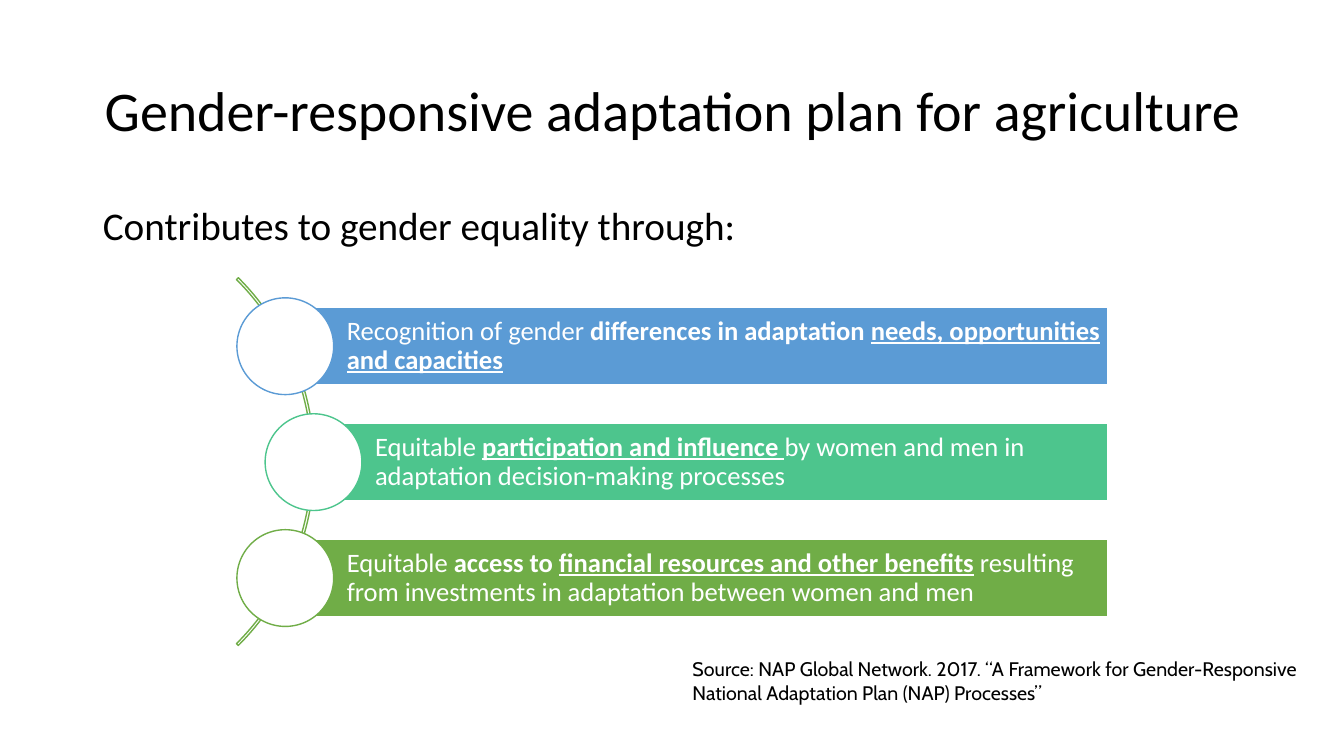
from lxml.etree import SubElement
from pptx import Presentation
from pptx.dml.color import RGBColor
from pptx.enum.shapes import MSO_SHAPE as Shape
from pptx.enum.text import MSO_ANCHOR as Anchor, PP_ALIGN as Align
from pptx.oxml.ns import qn
from pptx.util import Inches, Pt

COLOURS = {"black": "000000", "white": "FFFFFF", "blue": "5B9BD5",
           "teal": "4DC58D", "green": "70AD47"}


def write(box, spans, size, colour, font="Calibri", **layout):
    """Fill a box with one paragraph of (text, format values) spans."""
    box.text_frame.word_wrap = True
    para = box.text_frame.paragraphs[0]
    for name, value in layout.items():
        setattr(para, name, value)
    for text, values in spans:
        span = para.add_run()
        span.text = text
        span.font.color.rgb = RGBColor.from_string(COLOURS[colour])
        for name, value in {"name": font, "size": Pt(size), **values}.items():
            setattr(span.font, name, value)
    return para


def draw(kind, left, top, width, height, line, fill=None):
    """Add a flat preset shape with a 1 pt outline."""
    shape = page.shapes.add_shape(
        kind, Inches(left), Inches(top), Inches(width), Inches(height))
    shape.shadow.inherit = False
    shape.line.color.rgb = RGBColor.from_string(COLOURS[line])
    shape.line.width = Pt(1)
    if fill:
        shape.fill.solid()
        shape.fill.fore_color.rgb = RGBColor.from_string(COLOURS[fill])
    else:
        shape.fill.background()
    return shape


deck = Presentation()
deck.slide_width, deck.slide_height = Inches(13.33), Inches(7.5)
page = deck.slides.add_slide(deck.slide_layouts[1])

# Title and lead-in
title, body = page.placeholders
for box, top, height in ((title, 0.4, 1.45), (body, 2, 4.76)):
    box.left, box.top = Inches(0.92), Inches(top)
    box.width, box.height = Inches(11.5), Inches(height)

title.text_frame.vertical_anchor = Anchor.MIDDLE
write(title, [("Gender-responsive adaptation plan for agriculture", {})],
      40, "black", alignment=Align.CENTER, line_spacing=0.9)
lead = write(body, [("Contributes to gender equality through:", {})],
             28, "black", line_spacing=0.9, space_before=Pt(10))
lead_format = lead._p.get_or_add_pPr()
lead_format.set("marL", "0")
lead_format.set("indent", "0")
SubElement(lead_format, qn("a:buNone"))

# Arc behind the circles: from 315 to 45 degrees
arc = draw(Shape.BLOCK_ARC, -2.04, 2, 5.16, 5.16, "green")
for index, value in enumerate((189, 27, 0.005)):
    arc.adjustments[index] = value

# Three bars, each with a circle on its left end
BOLD = {"bold": True}
STRESSED = {"bold": True, "underline": True}
BAR_RIGHT, BAR_HEIGHT, CIRCLE, PITCH = 10.99, 0.77, 0.96, 1.15
contributions = [
    (2.83, "blue", [("Recognition of gender ", {}),
                    ("differences in adaptation ", BOLD),
                    ("needs, opportunities and capacities", STRESSED)]),
    (3.11, "teal", [("Equitable ", {}),
                    ("participation and influence ", STRESSED),
                    ("by women and men in adaptation decision-making processes", {})]),
    (2.83, "green", [("Equitable ", {}),
                     ("access to ", BOLD),
                     ("financial resources and other benefits", STRESSED),
                     (" ", BOLD),
                     ("resulting from investments in adaptation between women and men", {})]),
]
for row, (left, colour, spans) in enumerate(contributions):
    top = 3.05 + row * PITCH
    bar = draw(Shape.RECTANGLE, left, top, BAR_RIGHT - left, BAR_HEIGHT,
               "white", colour)
    frame = bar.text_frame
    frame.vertical_anchor = Anchor.MIDDLE
    frame.margin_left = Inches(0.61)
    frame.margin_right = frame.margin_top = frame.margin_bottom = Inches(0.05)
    write(bar, spans, 19, "white", alignment=Align.LEFT, line_spacing=0.9)
    draw(Shape.OVAL, left - CIRCLE / 2, top + (BAR_HEIGHT - CIRCLE) / 2,
         CIRCLE, CIRCLE, colour, "white")

# Source
source = page.shapes.add_textbox(
    Inches(6.77), Inches(6.47), Inches(6.24), Inches(0.57))
write(source, [("Source: NAP Global Network. 2017. “A Framework for Gender-Responsive "
                "National Adaptation Plan (NAP) Processes”", {})],
      14, "black", font="Cabin")

deck.save("out.pptx")
